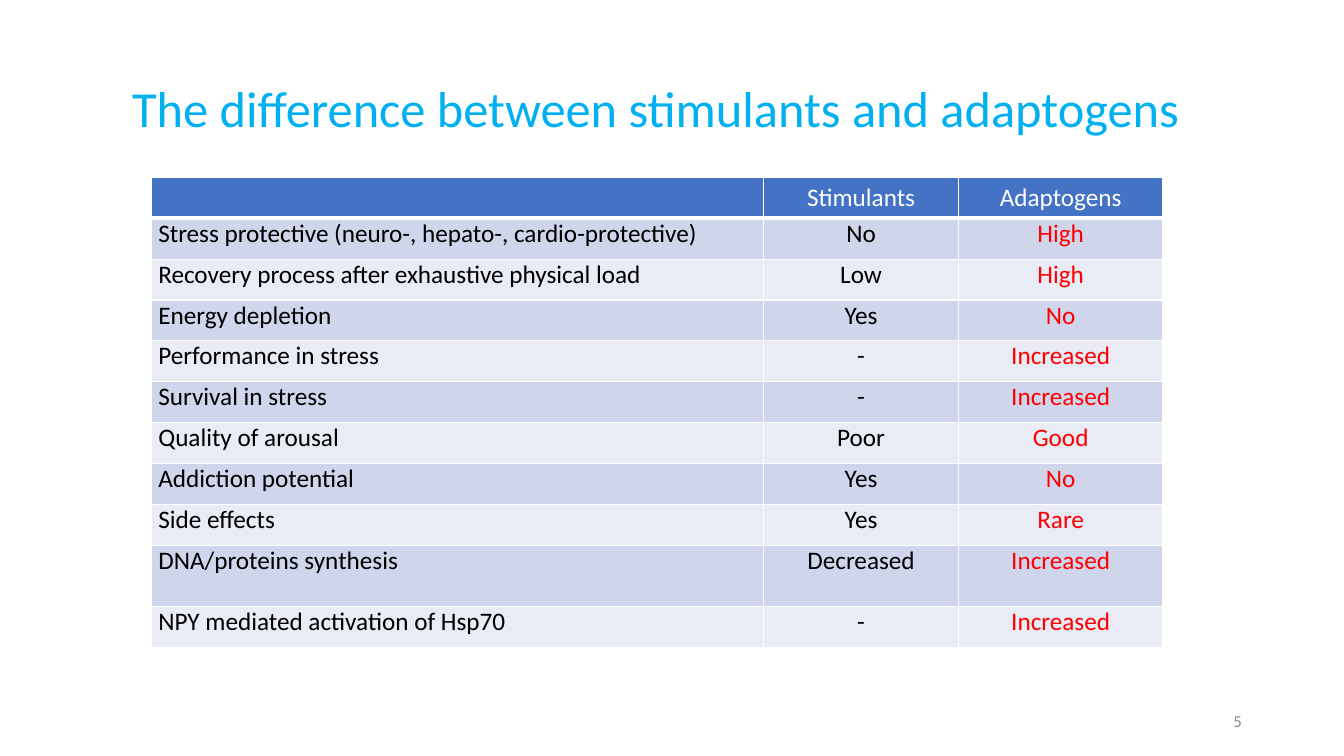
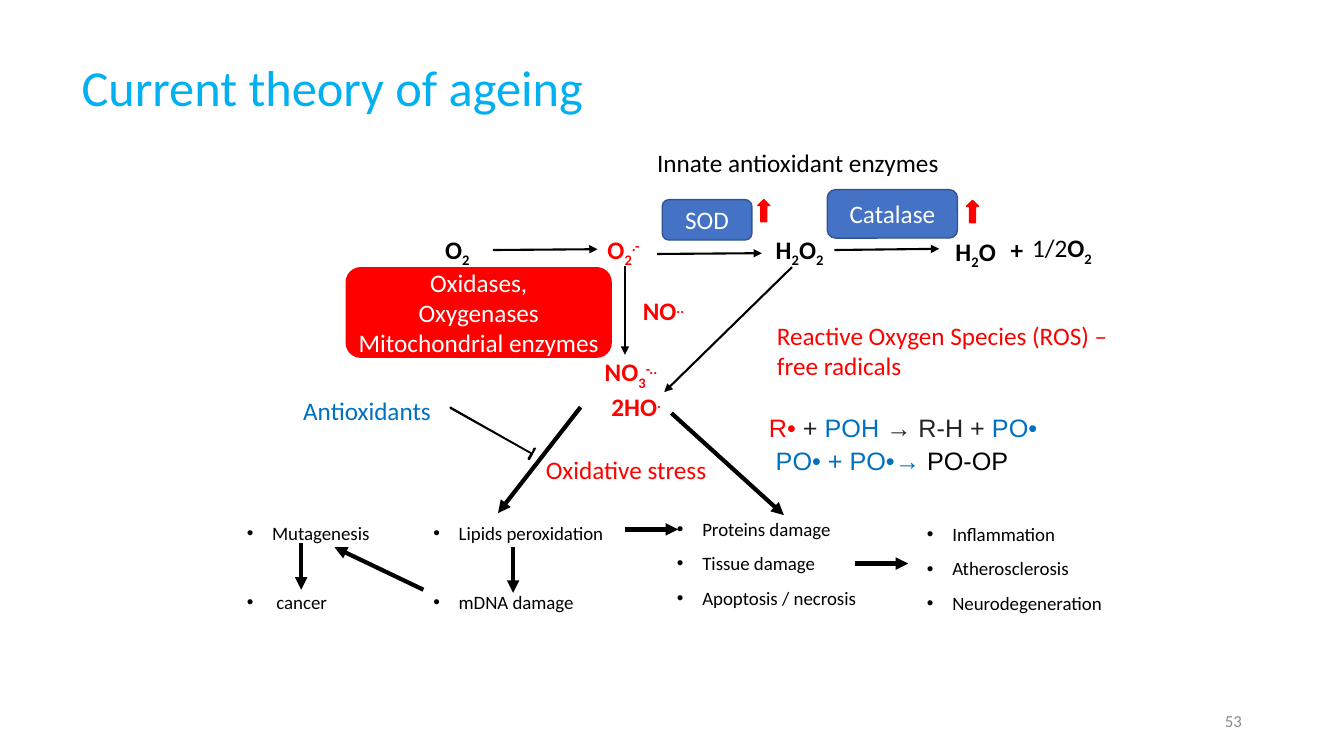
"""Build two slides: stimulants against adaptogens, and the theory of ageing."""
from lxml import etree
from pptx import Presentation
from pptx.dml.color import RGBColor
from pptx.enum.shapes import MSO_CONNECTOR, MSO_SHAPE
from pptx.enum.text import MSO_ANCHOR, MSO_AUTO_SIZE, PP_ALIGN
from pptx.oxml.ns import qn
from pptx.util import Cm, Pt

LEFT, MID, RIGHT = PP_ALIGN.LEFT, PP_ALIGN.CENTER, PP_ALIGN.RIGHT
CENTER = MSO_ANCHOR.MIDDLE
NO_FIT = MSO_AUTO_SIZE.NONE
LINE = MSO_CONNECTOR.STRAIGHT
ROUND, UP = MSO_SHAPE.ROUNDED_RECTANGLE, MSO_SHAPE.UP_ARROW

HUES = {
    "black": "000000", "white": "FFFFFF", "red": "FF0000", "sky": "00B0F0",
    "blue": "0070C0", "ink": "252525", "gray": "8C8C8C", "head": "4472C4",
    "edge": "325491", "odd": "CFD5EA", "even": "E9EBF5",
}
RGB = {name: RGBColor.from_string(code) for name, code in HUES.items()}


def add(para, text, hue="black", size=18, bold=False, base=0, face="Calibri"):
    """Add one formatted run to a paragraph."""
    run = para.add_run()
    run.text = text
    font = run.font
    font.name, font.size, font.bold = face, Pt(size), bold
    font.color.rgb = RGB[hue]
    if base:
        run._r.get_or_add_rPr().set("baseline", str(base * 1000))


def box(slide, x, y, w, h=1.02, wrap=True):
    """Add a text box and return it."""
    shape = slide.shapes.add_textbox(Cm(x), Cm(y), Cm(w), Cm(h))
    shape.text_frame.word_wrap = wrap
    return shape


deck = Presentation()
deck.slide_width, deck.slide_height = Cm(33.87), Cm(19.05)

heads = [
    ("The difference between stimulants and adaptogens", "5",
     (2.46, 1.85, 28.14, 1.7), MID, CENTER, 1),
    ("Current theory of ageing", "53",
     (1.8, 1.47, 16.66, 1.52), LEFT, MSO_ANCHOR.TOP, 0.9),
]
slides = []
for text, num, spot, side, anchor, lead in heads:
    slide = deck.slides.add_slide(deck.slide_layouts[5])
    title = slide.shapes.title
    title.left, title.top, title.width, title.height = map(Cm, spot)
    frame = title.text_frame
    frame.auto_size, frame.vertical_anchor = NO_FIT, anchor
    para = frame.paragraphs[0]
    para.alignment, para.line_spacing = side, lead
    add(para, text, "sky", 36)
    frame = box(slide, 23.93, 17.65, 7.62).text_frame
    frame.vertical_anchor = CENTER
    para = frame.paragraphs[0]
    para.alignment = RIGHT
    add(para, num, "gray", 12)
    slides.append(slide)
first, second = slides

rows = [
    ("", "Stimulants", "Adaptogens"),
    ("Stress protective (neuro-, hepato-, cardio-protective)", "No", "High"),
    ("Recovery process after exhaustive physical load", "Low", "High"),
    ("Energy depletion", "Yes", "No"),
    ("Performance in stress", "-", "Increased"),
    ("Survival in stress", "-", "Increased"),
    ("Quality of arousal", "Poor", "Good"),
    ("Addiction potential", "Yes", "No"),
    ("Side effects", "Yes", "Rare"),
    ("DNA/proteins synthesis", "Decreased", "Increased"),
    ("NPY mediated activation of Hsp70", "-", "Increased"),
]
high, tall = 1.03, 1.55
table = first.shapes.add_table(
    len(rows), 3, Cm(3.81), Cm(4.47), Cm(25.5), Cm(high * 10 + tall)).table
for col, width in zip(table.columns, (15.44, 4.9, 5.16)):
    col.width = Cm(width)
for r, row in enumerate(rows):
    table.rows[r].height = Cm(tall if row[0].startswith("DNA") else high)
    for c, text in enumerate(row):
        cell = table.cell(r, c)
        props = cell._tc.get_or_add_tcPr()
        for side in ("lnL", "lnR", "lnT", "lnB"):
            thick = (r, side) in ((0, "lnB"), (1, "lnT"))
            edge = etree.SubElement(props, qn("a:" + side), w=str(Pt(3 if thick else 1)))
            paint = etree.SubElement(edge, qn("a:solidFill"))
            etree.SubElement(paint, qn("a:srgbClr"), val=HUES["white"])
        cell.fill.solid()
        cell.fill.fore_color.rgb = RGB["head" if r == 0 else "odd" if r % 2 else "even"]
        if r:
            cell.margin_left = cell.margin_right = Cm(0.18)
            cell.margin_top = cell.margin_bottom = 0
        para = cell.text_frame.paragraphs[0]
        para.alignment = MID if c else LEFT
        if text:
            add(para, text, "white" if r == 0 else "red" if c == 2 else "black")

terms = [
    (10.97, 5.77, 1.27, "black", [("O", 0), ("2", -25)]),
    (15.06, 5.77, 1.68, "red", [("O", 0), ("2", -25), (".-", 30)]),
    (25.76, 5.74, 2.41, "black", [("1/2", 0), ("O", 0), ("2", -25)]),
    (19.3, 5.77, 2.41, "black", [("H", 0), ("2", -25), ("O", 0), ("2", -25)]),
    (23.83, 5.82, 2.41, "black", [("H", 0), ("2", -25), ("O", 0)]),
    (25.22, 5.77, 0.84, "black", [("+", 0)]),
    (14.99, 8.86, 2.21, "red", [("NO", 0), ("3", -25), ("-..", 30)]),
    (15.95, 7.32, 1.8, "red", [("NO", 0), ("..", 30)]),
    (15.16, 9.73, 2.59, "red", [("2HO", 0), (".", 30)]),
]
chems = []
for x, y, w, hue, runs in terms:
    chem = box(second, x, y, w)
    for text, base in runs:
        add(chem.text_frame.paragraphs[0], text, hue, bold=text != "1/2", base=base)
    chems.append(chem)

blocks = [
    (ROUND, 16.69, 5.03, 2.26, 1.02, "head", "edge", ["SOD"]),
    (ROUND, 20.85, 4.78, 3.28, 1.22, "head", "edge", ["Catalase"]),
    (ROUND, 8.71, 6.73, 6.71, 2.29, "red", None,
     ["Oxidases,", "Oxygenases", "Mitochondrial enzymes"]),
    (UP, 24.36, 5.05, 0.3, 0.56, "red", "red", []),
    (UP, 19.1, 5.03, 0.3, 0.56, "red", "red", []),
]
for kind, x, y, w, h, hue, edge, lines in blocks:
    shape = second.shapes.add_shape(kind, Cm(x), Cm(y), Cm(w), Cm(h))
    shape.shadow.inherit = False
    shape.fill.solid()
    shape.fill.fore_color.rgb = RGB[hue]
    if edge:
        shape.line.color.rgb = RGB[edge]
        shape.line.width = Pt(1)
    else:
        shape.line.fill.background()
    frame = shape.text_frame
    frame.word_wrap, frame.vertical_anchor = True, CENTER
    frame.margin_left = frame.margin_right = Cm(0.18)
    frame.margin_top = frame.margin_bottom = Cm(0.1)
    for i, text in enumerate(lines):
        para = frame.add_paragraph() if i else frame.paragraphs[0]
        para.alignment = MID
        add(para, text, "white")

notes = [
    (16.31, 3.58, 9.32, 1.02, LEFT, "black", "Innate antioxidant enzymes"),
    (13.39, 11.33, 4.78, 1.02, MID, "red", "Oxidative stress"),
    (6.86, 9.83, 4.78, 1.02, MID, "blue", "Antioxidants"),
    (19.33, 7.95, 9.78, 1.8, LEFT, "red", "Reactive Oxygen Species (ROS) – free radicals"),
]
for x, y, w, h, side, hue, text in notes:
    para = box(second, x, y, w, h).text_frame.paragraphs[0]
    para.alignment = side
    add(para, text, hue)

sums = [
    (19.13, 10.26, 7.34, [("R• ", "red"), ("+ ", "ink"), ("POH ", "blue"),
                          ("→ R-H + ", "ink"), ("PO•", "blue")]),
    (19.3, 11.1, 6.43, [("PO• + PO•→ ", "blue"), ("PO-OP", "black")]),
]
for x, y, w, runs in sums:
    para = box(second, x, y, w, wrap=False).text_frame.paragraphs[0]
    for text, hue in runs:
        add(para, text, hue, face="Arial")

harms = [
    (5.97, 13.08, 5.82, 34.5, ["Mutagenesis", " cancer"]),
    (10.67, 13.08, 5.82, 34.5, ["Lipids peroxidation", "mDNA damage"]),
    (16.81, 12.98, 5.89, 10, ["Proteins damage", "Tissue damage", "Apoptosis / necrosis"]),
    (23.11, 13.11, 5.89, 10, ["Inflammation", "Atherosclerosis", "Neurodegeneration"]),
]
lists = []
for x, y, w, gap, items in harms:
    shape = box(second, x, y, w, 2.59)
    frame = shape.text_frame
    for i, text in enumerate(items):
        para = frame.add_paragraph() if i else frame.paragraphs[0]
        props = para._p.get_or_add_pPr()
        props.set("marL", str(Cm(0.64)))
        props.set("indent", str(-Cm(0.64)))
        etree.SubElement(props, qn("a:buFont"), typeface="Arial")
        etree.SubElement(props, qn("a:buChar"), char="•")
        para.line_spacing = 0.9
        para.space_before = Pt(gap if i else 0)
        add(para, text, size=13.5)
    lists.append(shape)

arrows = [
    (12.42, 6.3, 15.06, 6.28, 1.5, (chems[1], 1)),
    (16.56, 6.4, 19.2, 6.38, 1.5, None),
    (21.03, 6.3, 23.67, 6.27, 1.5, None),
    (15.75, 6.71, 15.75, 8.94, 1.5, None),
    (19.96, 6.73, 16.74, 9.88, 1.5, None),
    (14.63, 10.26, 12.55, 12.93, 3, None),
    (16.92, 10.41, 19.76, 12.98, 3, (lists[2], 0)),
    (12.93, 13.79, 12.93, 14.94, 3, None),
    (7.59, 13.69, 7.59, 14.86, 3, None),
    (10.67, 14.86, 8.43, 13.79, 3, None),
    (15.75, 13.34, 17.09, 13.34, 3, None),
    (21.54, 14.2, 22.89, 14.2, 3, None),
]
for x, y, x2, y2, width, goal in arrows:
    arrow = second.shapes.add_connector(LINE, Cm(x), Cm(y), Cm(x2), Cm(y2))
    if goal:
        arrow.end_connect(*goal)
    arrow.line.color.rgb = RGB["black"]
    arrow.line.width = Pt(width)
    etree.SubElement(arrow.line._get_or_add_ln(), qn("a:tailEnd"), type="triangle")
    etree.SubElement(arrow._element.spPr, qn("a:effectLst"))

points = [(13.41, 11.43), (13.46, 11.3), (13.49, 11.3), (13.34, 11.58),
          (13.31, 11.56), (13.39, 11.43), (11.35, 10.29)]
pen = second.shapes.build_freeform(Cm(11.35), Cm(10.26))
pen.add_line_segments([(Cm(x), Cm(y)) for x, y in points], close=True)
block = pen.convert_to_shape()
block.shadow.inherit = False
block.fill.background()
block.line.color.rgb = RGB["black"]
block.line.width = Pt(1)

deck.save("out.pptx")
